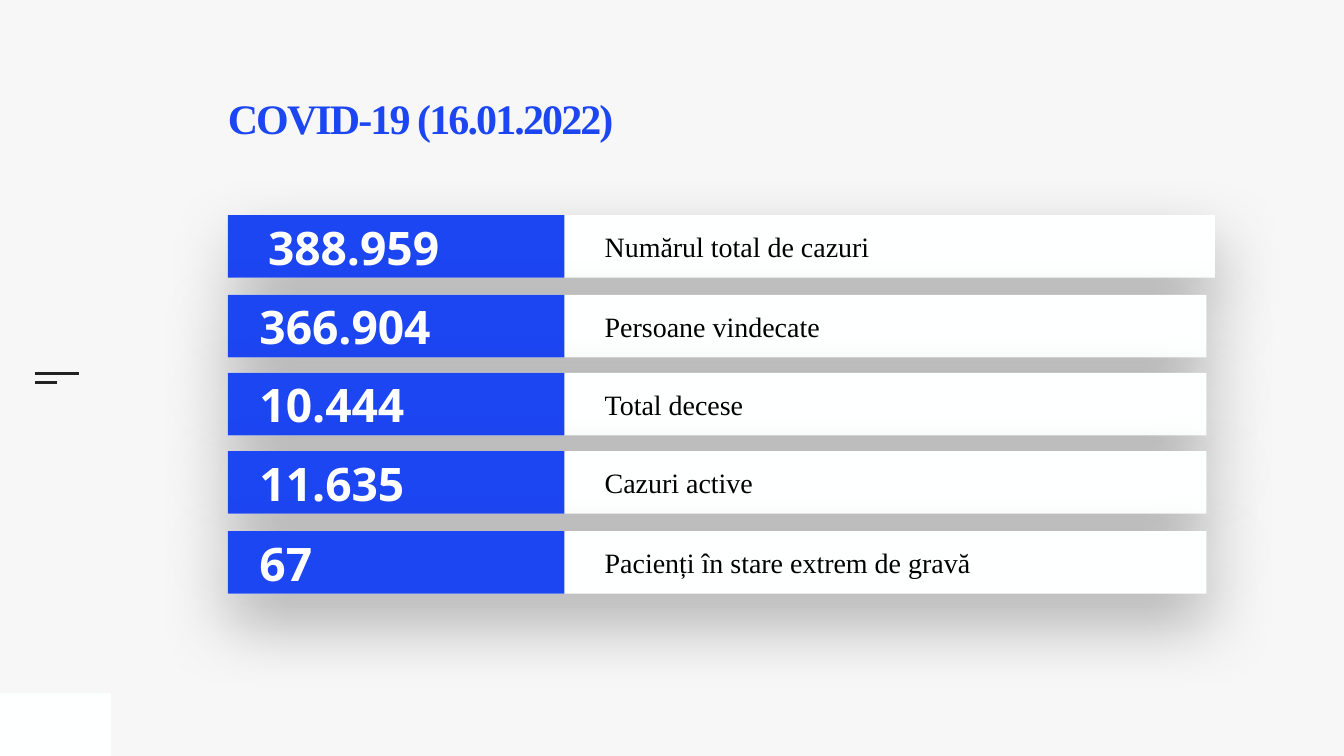
import pptx
import pptx.util
import pptx.dml.color
import pptx.enum.shapes
import pptx.enum.text
import pptx.oxml
import pptx.oxml.ns
from pptx.util import Inches

BLUE, WHITE, BLACK, DARK = "1D46F3", "FEFFFF", "000000", "222222"
DRAWING = pptx.oxml.ns.nsdecls("a")


def rgb(color):
    return pptx.dml.color.RGBColor.from_string(color)


def add_rectangle(shapes, left, top, width, height, color):
    shape = shapes.add_shape(pptx.enum.shapes.MSO_SHAPE.RECTANGLE,
                             Inches(left), Inches(top), Inches(width), Inches(height))
    shape.shadow.inherit = False
    shape.fill.solid()
    shape.fill.fore_color.rgb = rgb(color)
    shape.line.fill.background()
    return shape


presentation = pptx.Presentation()
presentation.slide_width = Inches(26.67)
presentation.slide_height = Inches(15)
slide = presentation.slides.add_slide(presentation.slide_layouts[5])
slide.background.fill.solid()
slide.background.fill.fore_color.rgb = rgb("F7F7F7")

# Corner block and the two short lines at the left edge
add_rectangle(slide.shapes, 0, 13.76, 2.2, 1.24, WHITE)
for right, y in [(1.57, 7.41), (1.13, 7.59)]:
    line = slide.shapes.add_connector(pptx.enum.shapes.MSO_CONNECTOR.STRAIGHT,
                                      Inches(0.69), Inches(y), Inches(right), Inches(y))
    line.line.color.rgb = rgb(DARK)
    line.line.width = pptx.util.Pt(3)
    line._element.spPr.append(pptx.oxml.parse_xml(f"<a:effectLst {DRAWING}/>"))

# Title
title = slide.shapes.title
title.left, title.top = Inches(4.52), Inches(1.88)
title.width, title.height = Inches(13.01), Inches(2.73)
frame = title.text_frame
frame.word_wrap = True
frame.auto_size = pptx.enum.text.MSO_AUTO_SIZE.NONE
frame.vertical_anchor = pptx.enum.text.MSO_ANCHOR.TOP
frame.margin_left = frame.margin_right = frame.margin_bottom = 0
frame.margin_top = Inches(0.15)
paragraph = frame.paragraphs[0]
paragraph.alignment = pptx.enum.text.PP_ALIGN.LEFT
paragraph.line_spacing = 0.8
run = paragraph.add_run()
run.text = "COVID-19 (16.01.2022)"
run.font.name = "Times New Roman"
run.font.size = pptx.util.Pt(60)
run.font.bold = True
run.font.color.rgb = rgb(BLUE)
run._r.get_or_add_rPr().set("spc", "-270")

# Rows: top, left of the white bar, left of the figure, figure, label
rows = [
    (4.27, 4.69, 5.22, "388.959", "Numărul total de cazuri"),
    (5.85, 4.52, 5.05, "366.904", "Persoane vindecate"),
    (7.40, 4.52, 5.05, "10.444", "Total decese"),
    (8.95, 4.52, 5.05, "11.635", "Cazuri active"),
    (10.54, 4.52, 5.05, "67", "Pacienți în stare extrem de gravă"),
]
for top, bar_left, figure_left, figure, label in rows:
    group = slide.shapes.add_group_shape()

    # White bar with a soft shadow below, then the blue block
    bar = add_rectangle(group.shapes, bar_left, top, 19.42, 1.24, WHITE)
    effects = bar._element.spPr.find(pptx.oxml.ns.qn("a:effectLst"))
    effects.append(pptx.oxml.parse_xml(
        f'<a:outerShdw {DRAWING} blurRad="{pptx.util.Pt(100)}" dist="{pptx.util.Pt(40)}" '
        f'dir="5400000" rotWithShape="0"><a:srgbClr val="{BLACK}">'
        '<a:alpha val="30000"/></a:srgbClr></a:outerShdw>'))
    add_rectangle(group.shapes, 4.52, top, 6.68, 1.24, BLUE)

    # Label and figure
    for text, left, offset, width, height, font, size, bold, color in [
        (label, 11.9, 0.18, 11.79, 0.88, "Times New Roman", 40, False, BLACK),
        (figure, figure_left, -0.03, 6.05, 1.31, "Open Sans", 66, True, "FFFFFF"),
    ]:
        box = group.shapes.add_textbox(Inches(left), Inches(top + offset),
                                       Inches(width), Inches(height))
        frame = box.text_frame
        frame.word_wrap = True
        frame.vertical_anchor = pptx.enum.text.MSO_ANCHOR.MIDDLE
        frame.margin_left = frame.margin_right = Inches(0.1)
        frame.margin_top = frame.margin_bottom = Inches(0.1)
        run = frame.paragraphs[0].add_run()
        run.text = text
        run.font.name = font
        run.font.size = pptx.util.Pt(size)
        run.font.bold = bold
        run.font.color.rgb = rgb(color)

presentation.save("out.pptx")
